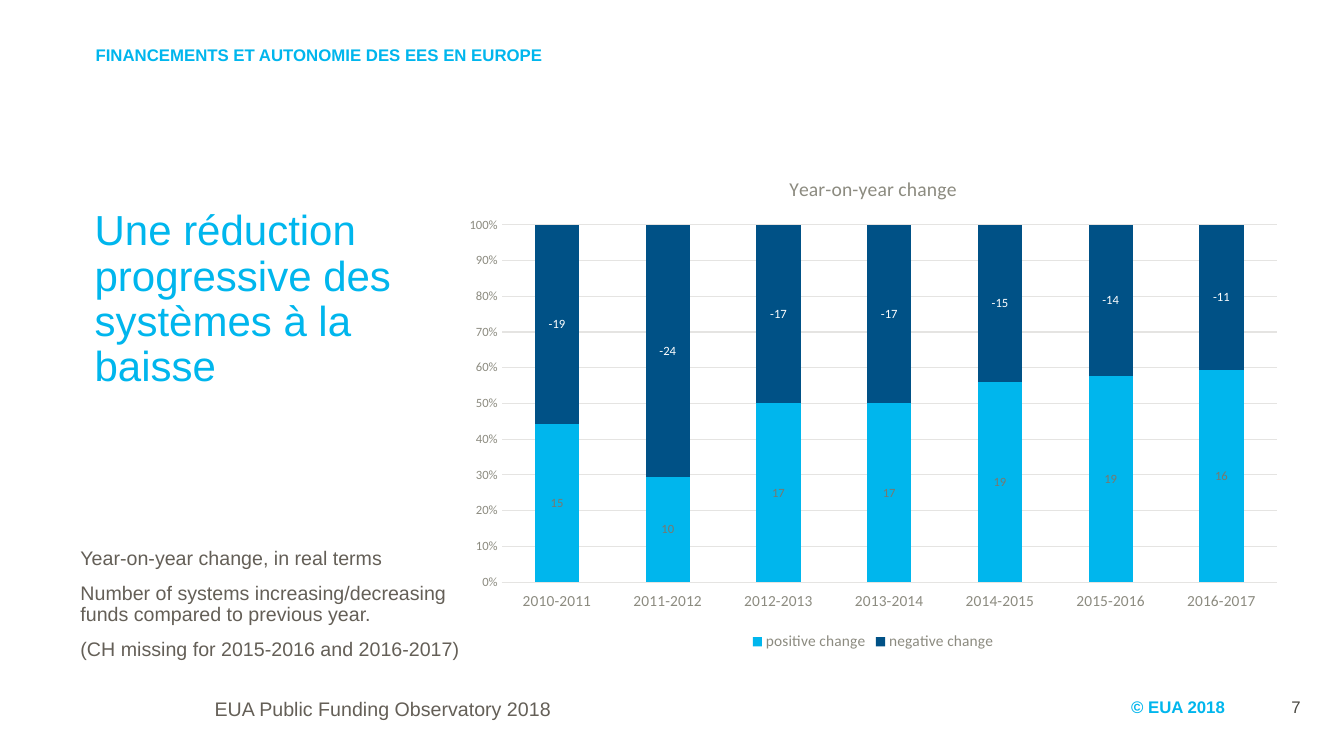
from pptx import Presentation
from pptx.chart.data import CategoryChartData
from pptx.dml.color import RGBColor
from pptx.enum.chart import (XL_CHART_TYPE as ChartType, XL_LABEL_POSITION as LabelPos,
                             XL_LEGEND_POSITION as LegendPos, XL_TICK_LABEL_POSITION as TickLabelPos,
                             XL_TICK_MARK as TickMark)
from pptx.enum.text import MSO_ANCHOR as Anchor, PP_ALIGN as Align
from pptx.util import Inches, Pt

COLORS = {
    "cyan": "00B6ED",
    "navy": "005186",
    "text": "645F57",
    "dark": "494842",
    "axis": "8C8B80",
    "label": "7A786E",
    "grid": "E5E4E2",
    "white": "FFFFFF",
}

YEARS = [f"{year}-{year + 1}" for year in range(2010, 2017)]
# name, values, bar colour, label colour
CHANGES = [
    ("positive change", [15, 10, 17, 17, 19, 19, 16], "cyan", "label"),
    ("negative change", [-19, -24, -17, -17, -15, -14, -11], "navy", "white"),
]


def rgb(color):
    return RGBColor.from_string(COLORS[color])


def set_font(font, size, color, name="Arial", bold=False):
    font.size = Pt(size)
    font.name = name
    font.bold = bold
    font.color.rgb = rgb(color)


def add_text(slide, box, lines, size, color, bold=False, anchor=Anchor.TOP,
             align=Align.LEFT, line_spacing=0.9):
    frame = slide.shapes.add_textbox(*map(Inches, box)).text_frame
    frame.word_wrap = True
    frame.vertical_anchor = anchor
    for index, line in enumerate(lines):
        paragraph = frame.paragraphs[0] if index == 0 else frame.add_paragraph()
        paragraph.text = line
        paragraph.alignment = align
        paragraph.line_spacing = line_spacing
        if index:
            paragraph.space_before = Pt(10)
        set_font(paragraph.font, size, color, bold=bold)


def style_axis(axis, size):
    axis.major_tick_mark = TickMark.NONE
    axis.minor_tick_mark = TickMark.NONE
    set_font(axis.tick_labels.font, size, "axis", "Calibri")


def style_line(line):
    line.color.rgb = rgb("grid")
    line.width = Pt(0.75)


def add_change_chart(slide, box):
    data = CategoryChartData()
    data.categories = YEARS
    for name, values, _, _ in CHANGES:
        data.add_series(name, values)
    chart = slide.shapes.add_chart(
        ChartType.COLUMN_STACKED_100, *map(Inches, box), data).chart
    set_font(chart.font, 10, "dark", "Calibri")

    # Title and legend
    chart.has_title = True
    heading = chart.chart_title.text_frame.paragraphs[0]
    heading.text = "Year-on-year change"
    set_font(heading.font, 14, "axis", "Calibri")
    chart.chart_title.include_in_layout = False
    chart.has_legend = True
    chart.legend.position = LegendPos.BOTTOM
    chart.legend.include_in_layout = False
    set_font(chart.legend.font, 11, "axis", "Calibri")

    # Axes
    years, share = chart.category_axis, chart.value_axis
    style_axis(years, 11)
    years.tick_label_position = TickLabelPos.LOW
    style_line(years.format.line)
    style_axis(share, 9)
    share.minimum_scale, share.maximum_scale, share.major_unit = 0, 1, 0.1
    share.tick_labels.number_format = "0%"
    share.tick_labels.number_format_is_linked = False
    share.format.line.fill.background()
    style_line(share.major_gridlines.format.line)

    # Bars and their values
    plot = chart.plots[0]
    plot.gap_width = 150
    plot.overlap = 100
    plot.vary_by_categories = False
    for series, (_, _, bar_color, label_color) in zip(plot.series, CHANGES):
        series.invert_if_negative = False
        series.format.fill.solid()
        series.format.fill.fore_color.rgb = rgb(bar_color)
        labels = series.data_labels
        labels.show_value = True
        labels.position = LabelPos.CENTER
        set_font(labels.font, 9, label_color, "Calibri")


def main():
    deck = Presentation()
    deck.slide_width, deck.slide_height = Inches(13.33), Inches(7.5)
    slide = deck.slides.add_slide(deck.slide_layouts[6])

    # Section heading and message
    add_text(slide, (0.85, 0.39, 5.64, 0.31),
             ["FINANCEMENTS ET AUTONOMIE DES EES EN EUROPE"], 12, "cyan",
             bold=True, anchor=Anchor.BOTTOM)
    add_text(slide, (0.84, 2.03, 3.26, 3.32),
             ["Une réduction progressive des systèmes à la baisse"], 30, "cyan")

    # Chart with its explanation and source
    add_change_chart(slide, (4.49, 1.55, 8.34, 4.95))
    add_text(slide, (0.7, 5.39, 3.97, 1.42),
             ["Year-on-year change, in real terms",
              "Number of systems increasing/decreasing funds compared to previous year.",
              "(CH missing for 2015-2016 and 2016-2017)"], 14, "text")
    add_text(slide, (2.03, 6.89, 4.05, 0.4),
             ["EUA Public Funding Observatory 2018"], 14, "text")

    # Footer
    add_text(slide, (11.12, 6.81, 1.13, 0.4), ["© EUA 2018"], 12, "cyan",
             bold=True, anchor=Anchor.MIDDLE, line_spacing=1.0)
    add_text(slide, (12.4, 6.81, 0.6, 0.4), ["7"], 12, "dark",
             anchor=Anchor.MIDDLE, align=Align.RIGHT, line_spacing=1.0)

    deck.save("out.pptx")


if __name__ == "__main__":
    main()
